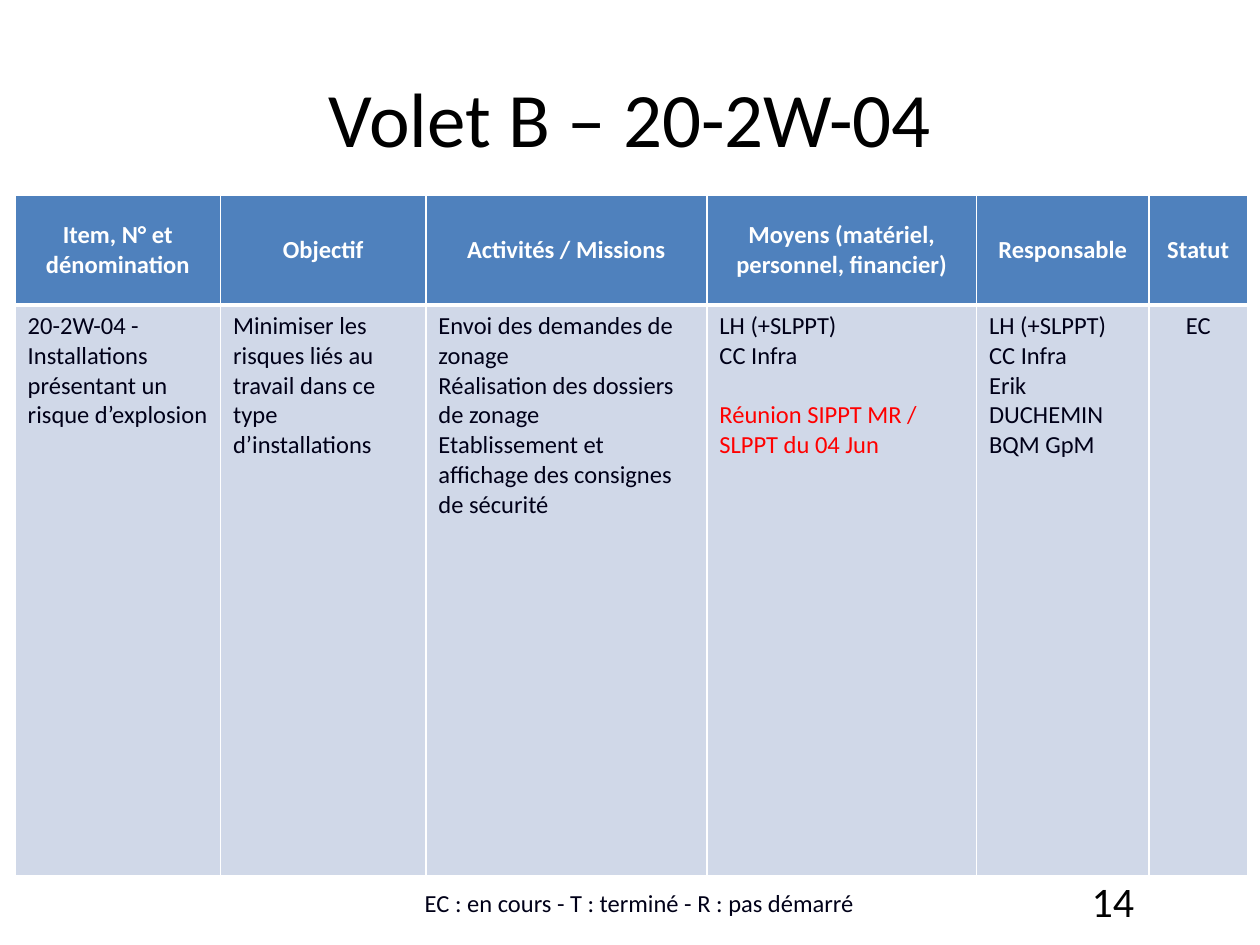
from dataclasses import dataclass

from lxml.etree import SubElement
from pptx import Presentation
from pptx.dml.color import RGBColor
from pptx.enum.text import MSO_ANCHOR, PP_ALIGN
from pptx.oxml.ns import qn
from pptx.util import Inches, Pt


@dataclass(frozen=True)
class Theme:
    font: str = "Calibri"
    black: str = "000000"
    white: str = "FFFFFF"
    ink: str = "000018"
    alert: str = "FF0000"
    header: str = "4F81BD"
    body: str = "D0D8E8"
    title_size: int = 44
    number_size: int = 24
    text_size: int = 14


@dataclass(frozen=True)
class Line:
    text: str
    color: str = Theme.ink
    before: float = 0


@dataclass(frozen=True)
class Column:
    head: str
    width: float
    lines: tuple[Line, ...]
    align: PP_ALIGN = PP_ALIGN.LEFT


THEME = Theme()
ROW_HEIGHTS = (0.87, 4.53)
COLUMNS = (
    Column("Item, N° et dénomination", 1.63,
           (Line("20-2W-04 - Installations présentant un risque d’explosion"),)),
    Column("Objectif", 1.63,
           (Line("Minimiser les risques liés au travail dans ce type d’installations"),)),
    Column("Activités / Missions", 2.23,
           (Line("Envoi des demandes de zonage"),
            Line("Réalisation des dossiers de zonage"),
            Line("Etablissement et affichage des consignes de sécurité"))),
    Column("Moyens (matériel, personnel, financier)", 2.14,
           (Line("LH (+SLPPT)"), Line("CC Infra"),
            Line("Réunion SIPPT MR / SLPPT du 04 Jun", THEME.alert, 17))),
    Column("Responsable", 1.37,
           (Line("LH (+SLPPT)"), Line("CC Infra"), Line("Erik DUCHEMIN BQM GpM"))),
    Column("Statut", 0.78, (Line("EC"),), PP_ALIGN.CENTER),
)


def write(tf, lines: tuple[Line, ...], size: float, align: PP_ALIGN, bold: bool = False) -> None:
    for i, line in enumerate(lines):
        p = tf.paragraphs[0] if i == 0 else tf.add_paragraph()
        p.text = line.text
        p.alignment = align
        if line.before:
            p.space_before = Pt(line.before)
        p.font.name = THEME.font
        p.font.size = Pt(size)
        p.font.bold = bold
        p.font.color.rgb = RGBColor.from_string(line.color)


def set_borders(cell, bottom: float) -> None:
    tcPr = cell._tc.get_or_add_tcPr()
    for i, (side, width) in enumerate((("L", 1), ("R", 1), ("T", 1), ("B", bottom))):
        ln = SubElement(tcPr, qn(f"a:ln{side}"), w=str(Pt(width)))
        fill = SubElement(ln, qn("a:solidFill"))
        SubElement(fill, qn("a:srgbClr"), val=THEME.white)
        tcPr.remove(ln)
        tcPr.insert(i, ln)


def fill_cell(cell, lines: tuple[Line, ...], fill: str, align: PP_ALIGN,
              anchor: MSO_ANCHOR, bold: bool, bottom: float) -> None:
    cell.fill.solid()
    cell.fill.fore_color.rgb = RGBColor.from_string(fill)
    cell.vertical_anchor = anchor
    write(cell.text_frame, lines, THEME.text_size, align, bold)
    set_borders(cell, bottom)


def add_plan(s) -> None:
    width = sum(c.width for c in COLUMNS)
    table = s.shapes.add_table(2, len(COLUMNS), Inches(0.12), Inches(1.55),
                               Inches(width), Inches(sum(ROW_HEIGHTS))).table
    for row, height in zip(table.rows, ROW_HEIGHTS):
        row.height = Inches(height)
    for i, col in enumerate(COLUMNS):
        table.columns[i].width = Inches(col.width)
        fill_cell(table.cell(0, i), (Line(col.head, THEME.white),), THEME.header,
                  PP_ALIGN.CENTER, MSO_ANCHOR.MIDDLE, True, 3)
        fill_cell(table.cell(1, i), col.lines, THEME.body,
                  col.align, MSO_ANCHOR.TOP, False, 1)


def add_label(s, line: Line, left: float, width: float, height: float,
              size: float, align: PP_ALIGN, anchor: MSO_ANCHOR) -> None:
    tf = s.shapes.add_textbox(Inches(left), Inches(6.95), Inches(width), Inches(height)).text_frame
    tf.word_wrap = True
    tf.vertical_anchor = anchor
    write(tf, (line,), size, align)


def main() -> None:
    prs = Presentation()
    prs.slide_width, prs.slide_height = Inches(10), Inches(7.5)
    s = prs.slides.add_slide(prs.slide_layouts[5])
    title = s.shapes.title
    title.left, title.top = Inches(0.5), Inches(0.3)
    title.width, title.height = Inches(9), Inches(1.25)
    title.text_frame.vertical_anchor = MSO_ANCHOR.MIDDLE
    write(title.text_frame, (Line("Volet B – 20-2W-04", THEME.black),),
          THEME.title_size, PP_ALIGN.CENTER)
    add_plan(s)
    add_label(s, Line("14", THEME.black), 7.17, 1.93, 0.4,
              THEME.number_size, PP_ALIGN.RIGHT, MSO_ANCHOR.MIDDLE)
    add_label(s, Line("EC : en cours - T : terminé - R : pas démarré"), 2.32, 5.51, 0.38,
              THEME.text_size, PP_ALIGN.CENTER, MSO_ANCHOR.BOTTOM)
    prs.save("out.pptx")


if __name__ == "__main__":
    main()
